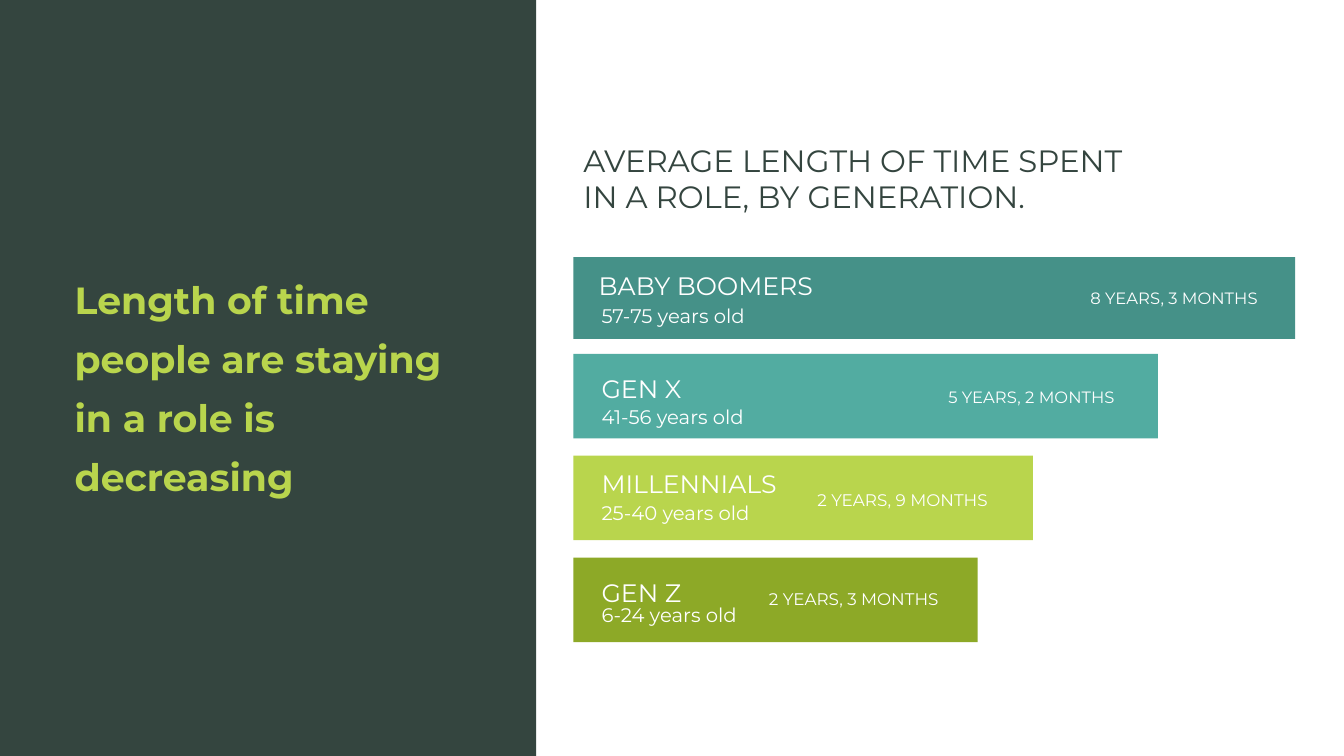
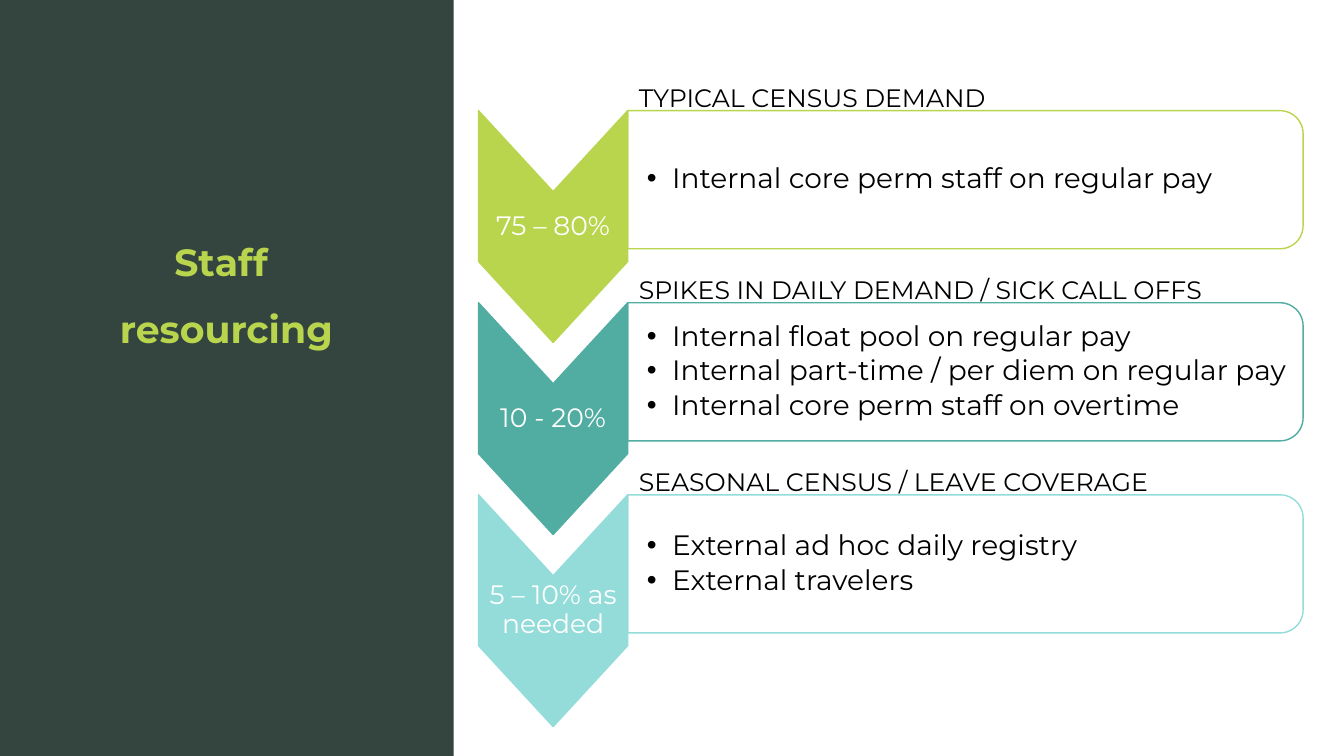
from math import cos, pi, sin

from lxml import etree
from pptx import Presentation
from pptx.dml.color import RGBColor
from pptx.enum.shapes import MSO_SHAPE
from pptx.enum.text import MSO_ANCHOR, MSO_AUTO_SIZE, PP_ALIGN
from pptx.oxml.ns import qn
from pptx.util import Cm, Pt

RECTANGLE = MSO_SHAPE.RECTANGLE
TOP, MIDDLE = MSO_ANCHOR.TOP, MSO_ANCHOR.MIDDLE
LEFT, CENTER = PP_ALIGN.LEFT, PP_ALIGN.CENTER
NO_FIT = MSO_AUTO_SIZE.NONE

# Shared look
FONT = "Montserrat"
DARK, LIME, WHITE, BLACK = "34453F", "B9D54D", "FFFFFF", "000000"
TEAL, AQUA = "51ACA1", "93DCD9"
SLIDE_WIDTH, SLIDE_HEIGHT = 33.87, 19.05
TITLE_ONLY, COMPARISON = 5, 4
DEFAULT_INSETS = (0.25, 0.13, 0.25, 0.13)
LABEL_INSETS = (0.13, 0.05, 0.13, 0.05)

# Bars: top, width, height, colour, then the offsets of the texts in the bar
BARS_LEFT = 14.45
BARS = [
    dict(box=(6.48, 18.19, 2.06), fill="459188", name="BABY BOOMERS",
         age="57-75 years old", time="8 YEARS, 3 MONTHS", time_size=11.7,
         name_at=(0.51, 0.72), age_at=(0.58, 1.47), time_at=(12.9, 1.03)),
    dict(box=(8.92, 14.73, 2.13), fill="52ACA1", name="GEN X",
         age="41-56 years old", time="5 YEARS, 2 MONTHS", time_size=11.7,
         name_at=(0.58, 0.88), age_at=(0.58, 1.57), time_at=(9.32, 1.08)),
    dict(box=(11.48, 11.58, 2.13), fill=LIME, name="MILLENNIALS",
         age="25-40 years old", time="2 YEARS, 9 MONTHS", time_size=12,
         name_at=(0.58, 0.7), age_at=(0.58, 1.45), time_at=(6.02, 1.12)),
    dict(box=(14.05, 10.19, 2.13), fill="8DA927", name="GEN Z",
         age="6-24 years old", time="2 YEARS, 3 MONTHS", time_size=12,
         name_at=(0.58, 0.88), age_at=(0.58, 1.45), time_at=(4.8, 1.05)),
]

# Steps: colour, share, heading, list
STEPS_LEFT, STEPS_TOP, STEP_PITCH = 12.06, 2.79, 4.84
STEPS = [
    (LIME, "75 – 80%", "TYPICAL CENSUS DEMAND",
     ["Internal core perm staff on regular pay"]),
    (TEAL, "10 - 20%", "SPIKES IN DAILY DEMAND / SICK CALL OFFS",
     ["Internal float pool on regular pay",
      "Internal part-time / per diem on regular pay",
      "Internal core perm staff on overtime"]),
    (AQUA, "5 – 10% as needed", "SEASONAL CENSUS / LEAVE COVERAGE",
     ["External ad hoc daily registry", "External travelers"]),
]


def colour(value):
    return RGBColor.from_string(value)


def apply(target, values):
    for name, value in values.items():
        setattr(target, name, value)


def place(shape, left, top, width, height):
    apply(shape, dict(left=Cm(left), top=Cm(top),
                      width=Cm(width), height=Cm(height)))


def paint(shape, fill=None, line=None):
    shape.shadow.inherit = False
    if fill:
        shape.fill.solid()
        shape.fill.fore_color.rgb = colour(fill)
    else:
        shape.fill.background()
    if line:
        shape.line.color.rgb = colour(line)
        shape.line.width = Pt(1)
    else:
        shape.line.fill.background()


def write(shape, lines, size, ink, bold=False, anchor=TOP,
          insets=DEFAULT_INSETS, **para_format):
    frame = shape.text_frame
    left, top, right, bottom = map(Cm, insets)
    apply(frame, dict(word_wrap=True, auto_size=NO_FIT,
                      vertical_anchor=anchor, margin_left=left,
                      margin_top=top, margin_right=right,
                      margin_bottom=bottom))
    frame.text = "\n".join(lines)
    for para in frame.paragraphs:
        apply(para, dict(alignment=LEFT, space_before=Pt(0)) | para_format)
        for span in para.runs:
            apply(span.font, dict(name=FONT, size=Pt(size), bold=bold))
            span.font.color.rgb = colour(ink)


def add_text(page, box, text, size, ink, **text_format):
    shape = page.shapes.add_textbox(*map(Cm, box))
    write(shape, [text], size, ink, **text_format)


def add_outline(page, points, fill=None, line=None):
    corners = [(Cm(x), Cm(y)) for x, y in points]
    builder = page.shapes.build_freeform(*corners[0])
    builder.add_line_segments(corners[1:], close=True)
    shape = builder.convert_to_shape()
    paint(shape, fill, line)
    return shape


def add_title_panel(page, width, lines, insets, alignment):
    """Dark side panel: the title placeholder fills it."""
    title = page.shapes.title
    place(title, 0, 0, width, SLIDE_HEIGHT)
    paint(title, DARK)
    write(title, lines, 27, LIME, bold=True, insets=insets,
          alignment=alignment, line_spacing=1.3, space_after=Pt(6))


def add_bar(page, bar):
    top, width, height = bar["box"]
    shape = page.shapes.add_shape(
        RECTANGLE, Cm(BARS_LEFT), Cm(top), Cm(width), Cm(height))
    paint(shape, bar["fill"])
    label_height = 1
    for part, size, label_width in (("name", 18, 6.4), ("age", 14, 5),
                                    ("time", bar["time_size"], 4.9)):
        across, middle = bar[part + "_at"]
        box = (BARS_LEFT + across, top + middle - label_height / 2,
               label_width, label_height)
        add_text(page, box, bar[part], size, WHITE, anchor=MIDDLE,
                 insets=LABEL_INSETS)


def add_chevron(page, left, top, width, height, fill, share):
    depth = 2.04
    right, centre, bottom = left + width, left + width / 2, top + height
    shape = add_outline(page, [
        (left, top), (centre, top + depth), (right, top),
        (right, bottom - depth), (centre, bottom), (left, bottom - depth),
    ], fill, fill)
    write(shape, [share], 19, WHITE, anchor=MIDDLE,
          insets=(0.03, 1.9, 0.03, 1.9), alignment=CENTER, line_spacing=0.9)


def add_card(page, left, top, width, height, line):
    """Card with its two right corners rounded."""
    radius, parts = 0.58, 12
    right, bottom = left + width, top + height
    points = [(left, bottom), (left, top)]
    for centre_y, start in ((top + radius, -pi / 2), (bottom - radius, 0)):
        for part in range(parts + 1):
            angle = start + part * pi / 2 / parts
            points.append((right - radius + radius * cos(angle),
                           centre_y + radius * sin(angle)))
    add_outline(page, points, line=line)


def fill_list(body, box, items):
    place(body, *box)
    write(body, items, 20, BLACK, anchor=MIDDLE,
          insets=(0.48, 0.2, 0.2, 0.2), line_spacing=0.9, space_after=Pt(3))
    for para in body.text_frame.paragraphs:
        properties = para._p.get_or_add_pPr()
        properties.set("marL", str(Cm(0.64)))
        properties.set("indent", str(-Cm(0.64)))
        etree.SubElement(properties, qn("a:buChar")).set("char", "•")


def add_step(page, top, step, body):
    tone, share, heading, items = step
    chevron_width = 3.76
    card = (STEPS_LEFT + chevron_width, top, 17.02, 3.48)
    add_chevron(page, STEPS_LEFT, top, chevron_width, 5.84, tone, share)
    add_card(page, *card, tone)
    fill_list(body, card, items)
    add_text(page, (card[0] + 0.03, top - 0.85, 17, 1.02), heading, 18, BLACK)


def build_generations(deck):
    page = deck.slides.add_slide(deck.slide_layouts[TITLE_ONLY])
    add_title_panel(
        page, 13.51,
        ["Length of time people are staying in a role is decreasing"],
        (1.88, 6.63, 1.6, 0), LEFT)
    add_text(page, (BARS_LEFT, 3.43, 14.73, 2.13),
             "AVERAGE LENGTH OF TIME SPENT IN A ROLE, BY GENERATION.",
             22, DARK)
    for bar in BARS:
        add_bar(page, bar)


def build_staffing(deck):
    page = deck.slides.add_slide(deck.slide_layouts[COMPARISON])
    add_title_panel(page, 11.43, ["Staff ", "resourcing"],
                    (0.69, 5.66, 0.71, 0), CENTER)
    bodies = list(page.placeholders)[1:]
    for index, step in enumerate(STEPS):
        add_step(page, STEPS_TOP + index * STEP_PITCH, step, bodies[index])
    for unused in bodies[len(STEPS):]:
        unused.element.getparent().remove(unused.element)


def main():
    deck = Presentation()
    deck.slide_width, deck.slide_height = Cm(SLIDE_WIDTH), Cm(SLIDE_HEIGHT)
    build_generations(deck)
    build_staffing(deck)
    deck.save("out.pptx")


if __name__ == "__main__":
    main()
